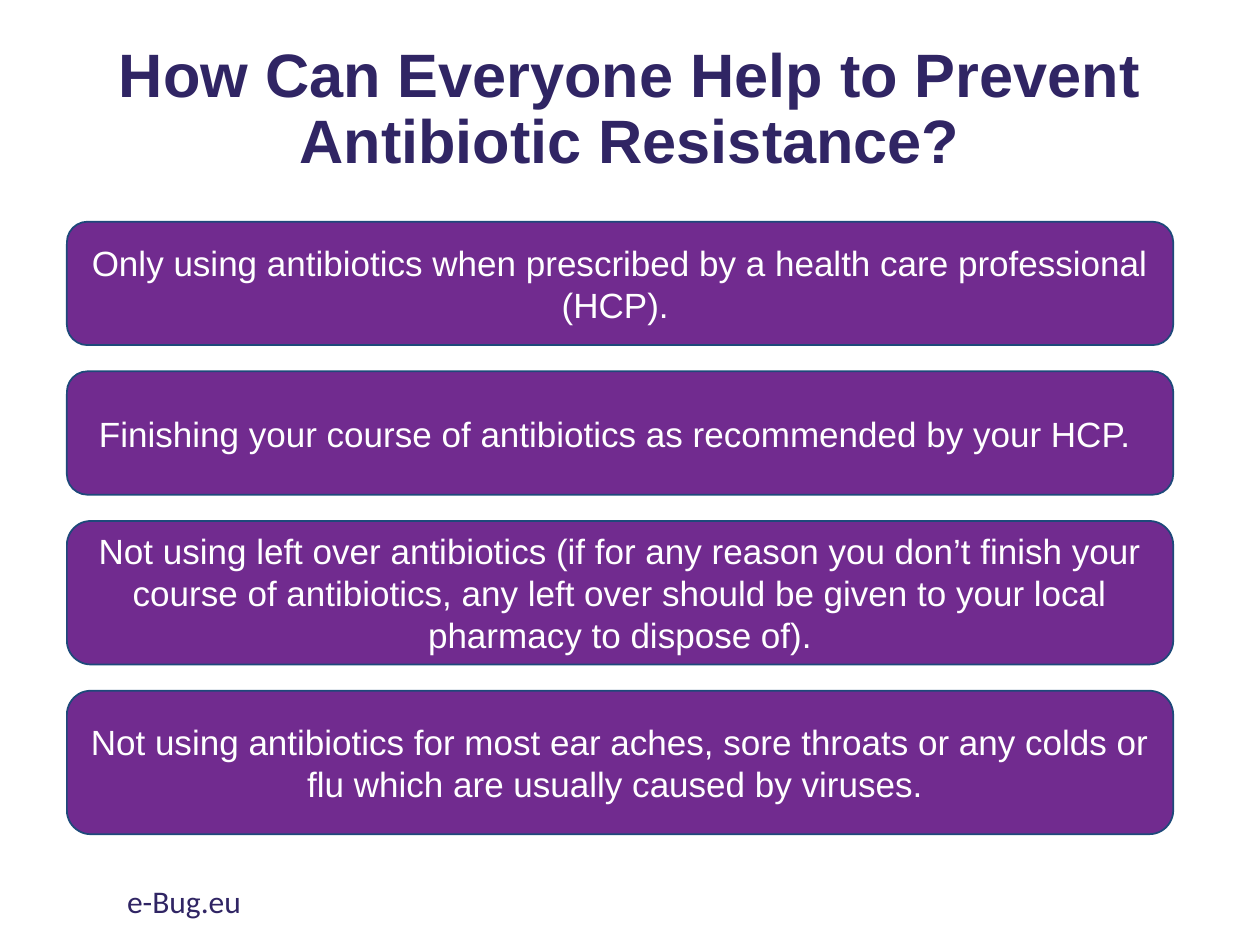
from pptx import Presentation
from pptx.dml.color import RGBColor
from pptx.enum import shapes, text
from pptx.util import Pt

NAVY = RGBColor(0x30, 0x25, 0x64)
PURPLE = RGBColor(0x71, 0x2B, 0x8F)
BLUE = RGBColor(0x1E, 0x49, 0x7A)
WHITE = RGBColor(0xFF, 0xFF, 0xFF)

TITLE_FORMAT = {"name": "Arial", "size": Pt(35), "bold": True}
ADVICE_FORMAT = {"name": "Arial", "size": Pt(20)}
FOOTER_FORMAT = {"name": "Calibri", "size": Pt(18)}

ADVICE_LEFT, ADVICE_TOP, ADVICE_WIDTH, ADVICE_GAP = 38.2, 126.7, 632.2, 15
ADVICE = [
    (70.5, "Only using antibiotics when prescribed by a health care professional (HCP). "),
    (70.5, "Finishing your course of antibiotics as recommended by your HCP. "),
    (82, "Not using left over antibiotics (if for any reason you don’t finish your "
         "course of antibiotics, any left over should be given to your local "
         "pharmacy to dispose of)."),
    (82, "Not using antibiotics for most ear aches, sore throats or any colds or "
         "flu which are usually caused by viruses. "),
]


def write_text(shape, words, font_format, color, alignment, anchor):
    frame = shape.text_frame
    frame.word_wrap = True
    frame.vertical_anchor = anchor
    paragraph = frame.paragraphs[0]
    paragraph.alignment = alignment
    run = paragraph.add_run()
    run.text = words
    for attribute, value in font_format.items():
        setattr(run.font, attribute, value)
    run.font.color.rgb = color
    return paragraph


presentation = Presentation()
presentation.slide_width = Pt(720)
presentation.slide_height = Pt(540)
slide = presentation.slides.add_slide(presentation.slide_layouts[6])

title = slide.shapes.add_textbox(Pt(49.7), Pt(10.8), Pt(620.6), Pt(104.4))
title_paragraph = write_text(
    title, "How Can Everyone Help to Prevent Antibiotic Resistance?",
    TITLE_FORMAT, NAVY, text.PP_ALIGN.CENTER, text.MSO_ANCHOR.MIDDLE)
title_paragraph.line_spacing = 0.9

top = ADVICE_TOP
for height, words in ADVICE:
    box = slide.shapes.add_shape(
        shapes.MSO_SHAPE.ROUNDED_RECTANGLE,
        Pt(ADVICE_LEFT), Pt(top), Pt(ADVICE_WIDTH), Pt(height))
    box.shadow.inherit = False
    box.fill.solid()
    box.fill.fore_color.rgb = PURPLE
    box.line.color.rgb = BLUE
    box.line.width = Pt(1)
    write_text(box, words, ADVICE_FORMAT, WHITE,
               text.PP_ALIGN.CENTER, text.MSO_ANCHOR.MIDDLE)
    top += height + ADVICE_GAP

footer = slide.shapes.add_textbox(Pt(65.5), Pt(500.4), Pt(243.4), Pt(28.8))
write_text(footer, "e-Bug.eu", FOOTER_FORMAT, NAVY,
           text.PP_ALIGN.LEFT, text.MSO_ANCHOR.TOP)

presentation.save("out.pptx")
